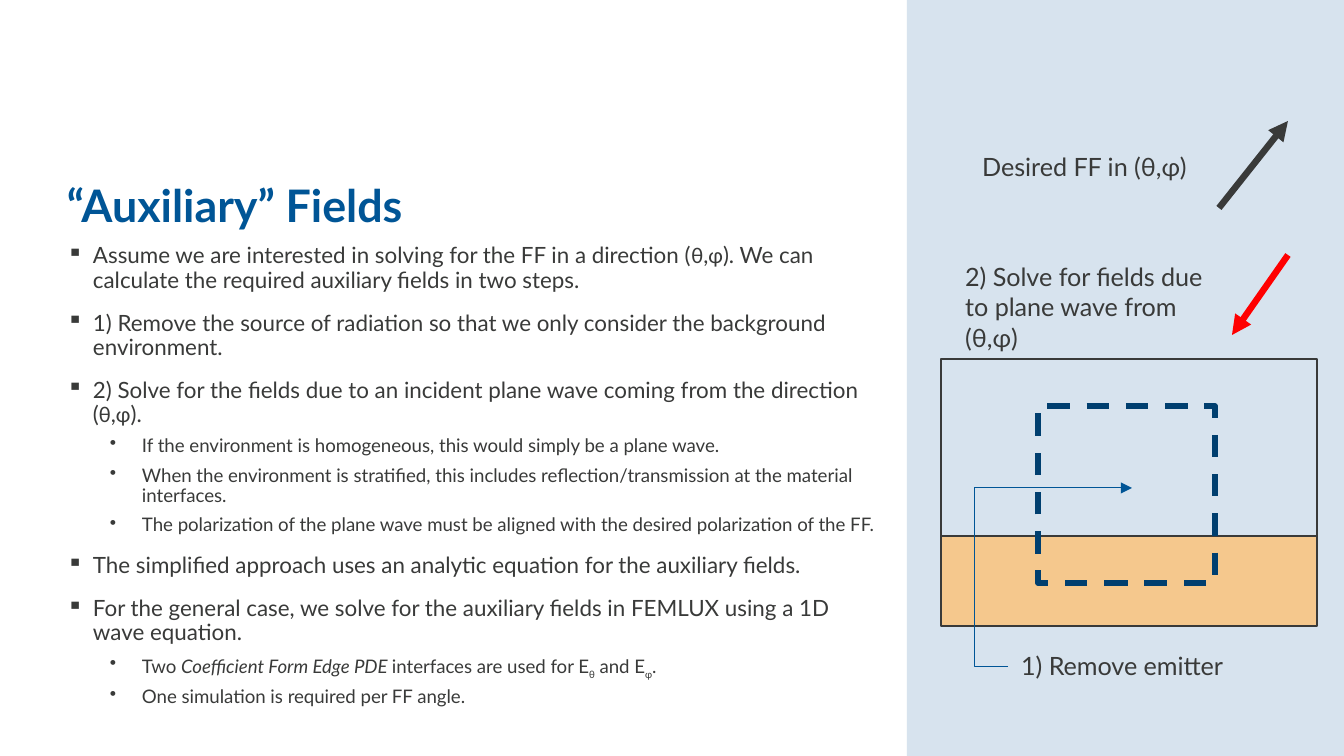
"""Build the slide on auxiliary fields with its far-field sketch."""
from itertools import groupby

from lxml import etree
from pptx import Presentation
from pptx import util as u
from pptx.dml.color import RGBColor
from pptx.enum import dml, shapes, text
from pptx.oxml.ns import qn

SCALE = 914400 / 134.4
COLORS = {"ink": "393A39", "title": "005596", "panel": "D7E3EE",
          "ground": "F5C88D", "emitter": "003F6F", "wave": "FF0000"}
TITLE = "“Auxiliary” Fields"
BODY = [
    (0, [("Assume we are interested in solving for the FF in a direction (θ,φ). "
          "We can calculate the required auxiliary fields in two steps.", "")]),
    (0, [("1) Remove the source of radiation so that we only consider the "
          "background environment.", "")]),
    (0, [("2) Solve for the fields due to an incident plane wave coming from the "
          "direction (θ,φ).", "")]),
    (1, [("If the environment is homogeneous, this would simply be a plane wave.", "")]),
    (1, [("When the environment is stratified, this includes reflection/transmission "
          "at the material interfaces.", "")]),
    (1, [("The polarization of the plane wave must be aligned with the desired "
          "polarization of the FF.", "")]),
    (0, [("The simplified approach uses an analytic equation for the auxiliary fields.", "")]),
    (0, [("For the general case, we solve for the auxiliary fields in FEMLUX using a "
          "1D wave equation.", "")]),
    (1, [("Two ", ""), ("Coefficient Form Edge PDE ", "italic"),
         ("interfaces are used for E", ""), ("θ", "sub"), (" and E", ""),
         ("φ", "sub"), (".", "")]),
    (1, [("One simulation is required per FF angle.", "")]),
]
LEVELS = [
    {"size": 12, "bullet": "▪", "margin": 26, "hang": 26, "before": 10},
    {"size": 10, "bullet": "•", "margin": 75, "hang": 32, "before": 5},
]
LABELS = [
    ("1) Remove emitter", (1008, 644, 238, 44)),
    ("Desired FF in (θ,φ)", (969, 145, 239, 44)),
    ("2) Solve for fields due to plane wave from (θ,φ)", (952, 255, 291, 75)),
]
REGIONS = [
    ((907, 0, 437, 756), "panel", None, 0, False),
    ((941, 359, 376, 177), "panel", "ink", 1, False),
    ((941, 536, 376, 90), "ground", "ink", 1, False),
    ((1038, 406, 177, 177), None, "emitter", 3, True),
]
ARROWS = [
    ((1219, 208), (1288, 121), "ink", 3.5, None),
    ((1288, 255), (1232, 335), "wave", 3.5, None),
    ((1008, 667), (1132, 488), "title", 0.5, 974),
]


def px(value):
    return u.Emu(round(value * SCALE))


def color(name):
    return RGBColor.from_string(COLORS[name])


def add_box(page, area):
    box = page.shapes.add_textbox(*map(px, area))
    box.text_frame.word_wrap = True
    return box.text_frame


def add_span(para, words, size, name="ink", face="Lato"):
    span = para.add_run()
    span.text = words
    span.font.name = face
    span.font.size = u.Pt(size)
    span.font.color.rgb = color(name)
    return span


def add_region(page, area, fill, line, weight, dashed):
    region = page.shapes.add_shape(shapes.MSO_SHAPE.RECTANGLE, *map(px, area))
    region.shadow.inherit = False
    if fill:
        region.fill.solid()
        region.fill.fore_color.rgb = color(fill)
    else:
        region.fill.background()
    if line:
        region.line.color.rgb = color(line)
        region.line.width = u.Pt(weight)
    else:
        region.line.fill.background()
    if dashed:
        region.line.dash_style = dml.MSO_LINE.DASH


def add_arrow(page, start, end, name, weight, bend):
    kind = shapes.MSO_CONNECTOR.ELBOW if bend else shapes.MSO_CONNECTOR.STRAIGHT
    arrow = page.shapes.add_connector(kind, *map(px, start + end))
    arrow.line.color.rgb = color(name)
    arrow.line.width = u.Pt(weight)
    props = arrow._element.spPr
    etree.SubElement(arrow.line._get_or_add_ln(), qn("a:tailEnd"), type="triangle")
    etree.SubElement(props, qn("a:effectLst"))
    if bend:
        ratio = round((bend - start[0]) / (end[0] - start[0]) * 100000)
        guides = props.find(qn("a:prstGeom")).find(qn("a:avLst"))
        etree.SubElement(guides, qn("a:gd"), name="adj1", fmla=f"val {ratio}")


def add_body(page, area):
    frame = add_box(page, area)
    frame.margin_left = 0
    for index, (level, parts) in enumerate(BODY):
        look = LEVELS[level]
        para = frame.paragraphs[0] if index == 0 else frame.add_paragraph()
        para.level = level
        props = para._p.get_or_add_pPr()
        props.set("marL", str(px(look["margin"])))
        props.set("indent", str(-px(look["hang"])))
        etree.SubElement(props, qn("a:buChar"), char=look["bullet"])
        para.line_spacing = 0.9
        para.space_before = u.Pt(look["before"] if index else 0)
        for words, style in parts:
            for greek, letters in groupby(words, key=lambda letter: letter in "θφ"):
                face = "Calibri" if greek else "Lato"
                span = add_span(para, "".join(letters), look["size"], face=face)
                if style == "italic":
                    span.font.italic = True
                if style == "sub":
                    span.font._element.set("baseline", "-25000")


def main():
    deck = Presentation()
    deck.slide_width, deck.slide_height = px(1344), px(756)
    page = deck.slides.add_slide(deck.slide_layouts[6])
    for region in REGIONS:
        add_region(page, *region)
    heading = add_box(page, (67, 121, 781, 118))
    heading.margin_left = 0
    heading.vertical_anchor = text.MSO_ANCHOR.BOTTOM
    heading.paragraphs[0].line_spacing = 0.9
    add_span(heading.paragraphs[0], TITLE, 24, "title").font.bold = True
    add_body(page, (67, 238, 831, 509))
    for words, area in LABELS:
        add_span(add_box(page, area).paragraphs[0], words, 13.5)
    for arrow in ARROWS:
        add_arrow(page, *arrow)
    deck.save("out.pptx")


if __name__ == "__main__":
    main()
